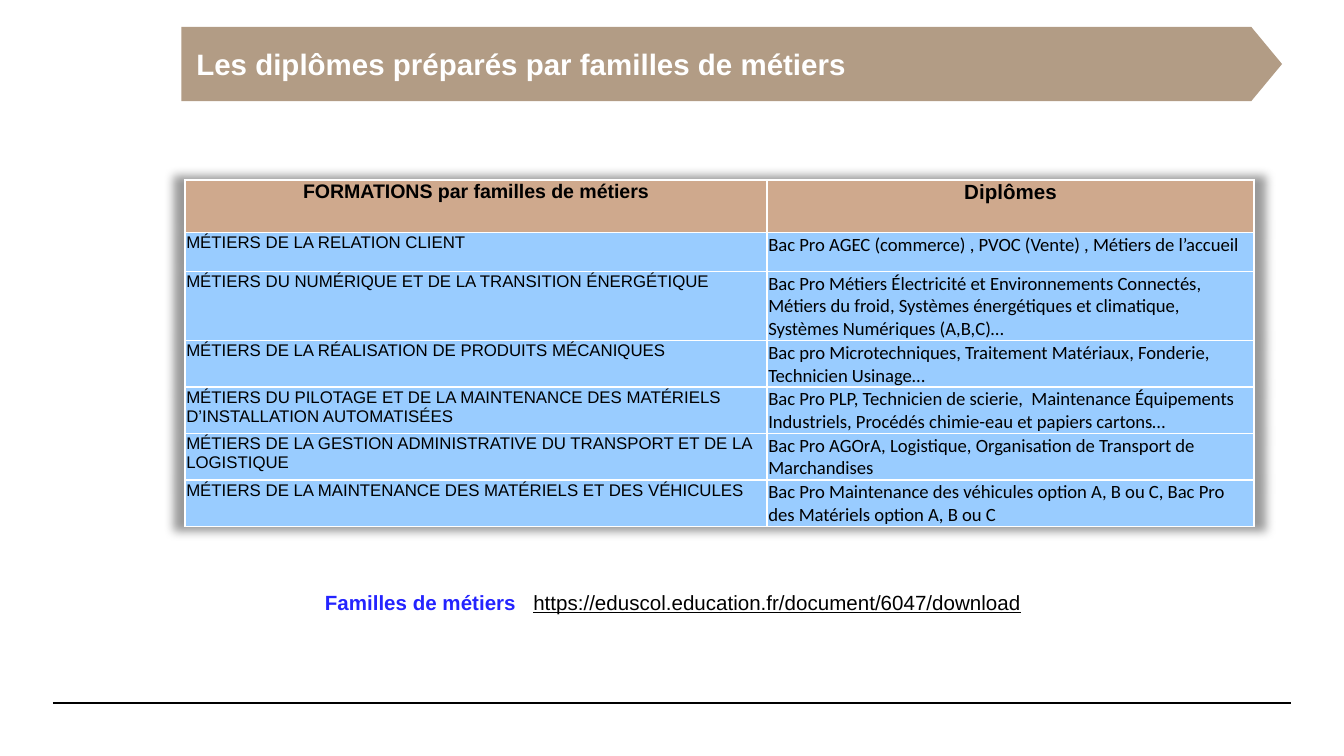
from lxml import etree
from pptx import Presentation
from pptx.dml.color import RGBColor
from pptx.enum.shapes import MSO_CONNECTOR as Connector, MSO_SHAPE as Shape
from pptx.enum.text import MSO_ANCHOR as Anchor, PP_ALIGN as Align
from pptx.oxml import parse_xml
from pptx.oxml.ns import nsdecls, qn
from pptx.util import Cm, Pt

BLACK = RGBColor(0x00, 0x00, 0x00)
WHITE = RGBColor(0xFF, 0xFF, 0xFF)
TAUPE = RGBColor(0xB2, 0x9C, 0x85)
TAN = RGBColor(0xCF, 0xA9, 0x8D)
SKY = RGBColor(0x99, 0xCC, 0xFF)
BLUE = RGBColor(0x24, 0x24, 0xFF)

HEADERS = ("FORMATIONS par familles de métiers", "Diplômes")
FAMILIES = [
    ("MÉTIERS DE LA RELATION CLIENT",
     "Bac Pro AGEC (commerce) , PVOC (Vente) , Métiers de l’accueil"),
    ("MÉTIERS DU NUMÉRIQUE ET DE LA TRANSITION ÉNERGÉTIQUE",
     "Bac Pro Métiers Électricité et Environnements Connectés, Métiers du froid, "
     "Systèmes énergétiques et climatique, Systèmes Numériques (A,B,C)…"),
    ("MÉTIERS DE LA RÉALISATION DE PRODUITS MÉCANIQUES",
     "Bac pro Microtechniques, Traitement Matériaux, Fonderie, Technicien Usinage…"),
    ("MÉTIERS DU PILOTAGE ET DE LA MAINTENANCE DES MATÉRIELS D’INSTALLATION AUTOMATISÉES",
     "Bac Pro PLP, Technicien de scierie,  Maintenance Équipements Industriels, "
     "Procédés chimie-eau et papiers cartons…"),
    ("MÉTIERS DE LA GESTION ADMINISTRATIVE DU TRANSPORT ET DE LA LOGISTIQUE",
     "Bac Pro AGOrA, Logistique, Organisation de Transport de Marchandises"),
    ("MÉTIERS DE LA MAINTENANCE DES MATÉRIELS ET DES VÉHICULES",
     "Bac Pro Maintenance des véhicules option A, B ou C, "
     "Bac Pro des Matériels option A, B ou C"),
]
HEADER_FONTS = (("Arial", 10.5), ("Arial", 11))
BODY_FONTS = (("Arial", 9), ("Calibri", 10))


def style_font(font, name, size, color, bold=False):
    font.name = name
    font.size = Pt(size)
    font.color.rgb = color
    font.bold = bold


def add_borders(cell):
    properties = cell._tc.get_or_add_tcPr()
    for position, side in enumerate(("lnL", "lnR", "lnT", "lnB")):
        properties.insert(position, parse_xml(
            f'<a:{side} {nsdecls("a")} w="12700"><a:solidFill>'
            f'<a:srgbClr val="{WHITE}"/></a:solidFill></a:{side}>'))


presentation = Presentation()
presentation.slide_width = Cm(25.4)
presentation.slide_height = Cm(14.28)
slide = presentation.slides.add_slide(presentation.slide_layouts[6])

footer_line = slide.shapes.add_connector(
    Connector.STRAIGHT, Cm(1), Cm(13.28), Cm(24.4), Cm(13.28))
footer_line.line.color.rgb = BLACK
footer_line.line.width = Pt(0.8)
etree.SubElement(footer_line._element.spPr, qn("a:effectLst"))

table = slide.shapes.add_table(
    len(FAMILIES) + 1, 2, Cm(3.5), Cm(3.4), Cm(20.2), Cm(5.43)).table
table.columns[0].width = Cm(11)
table.columns[1].width = Cm(9.2)
table._tbl.tblPr.insert(0, parse_xml(
    f'<a:effectLst {nsdecls("a")}><a:outerShdw blurRad="63500" sx="102000" '
    'sy="102000" algn="ctr" rotWithShape="0"><a:srgbClr val="000000">'
    '<a:alpha val="40000"/></a:srgbClr></a:outerShdw></a:effectLst>'))

for row_index, texts in enumerate([HEADERS, *FAMILIES]):
    is_header = row_index == 0
    table.rows[row_index].height = Cm(0.99 if is_header else 0.74)
    fonts = HEADER_FONTS if is_header else BODY_FONTS
    for column_index, (text, (name, size)) in enumerate(zip(texts, fonts)):
        cell = table.cell(row_index, column_index)
        cell.margin_left = cell.margin_right = cell.margin_top = Cm(0.02)
        cell.margin_bottom = 0
        cell.fill.solid()
        cell.fill.fore_color.rgb = TAN if is_header else SKY
        add_borders(cell)
        cell.text = text
        paragraph = cell.text_frame.paragraphs[0]
        paragraph.alignment = Align.CENTER if is_header else Align.LEFT
        style_font(paragraph.font, name, size, BLACK, is_header)

banner = slide.shapes.add_shape(
    Shape.PENTAGON, Cm(3.43), Cm(0.51), Cm(20.8), Cm(1.4))
banner.adjustments[0] = 0.415
banner.shadow.inherit = False
banner.fill.solid()
banner.fill.fore_color.rgb = TAUPE
banner.line.fill.background()
title_frame = banner.text_frame
title_frame.margin_left = title_frame.margin_right = Cm(0.28)
title_frame.vertical_anchor = Anchor.MIDDLE
title_frame.text = "Les diplômes préparés par familles de métiers"
paragraph = title_frame.paragraphs[0]
paragraph.alignment = Align.JUSTIFY
style_font(paragraph.font, "Arial", 15.8, WHITE, True)

source_box = slide.shapes.add_textbox(Cm(5.89), Cm(11.02), Cm(17.8), Cm(0.74))
source_box.text_frame.word_wrap = True
paragraph = source_box.text_frame.paragraphs[0]
tab_list = etree.SubElement(paragraph._p.get_or_add_pPr(), qn("a:tabLst"))
etree.SubElement(tab_list, qn("a:tab"), pos=str(Cm(3.94)), algn="l")
label = paragraph.add_run()
label.text = "Familles de métiers\t"
style_font(label.font, "Arial", 11, BLUE, True)
address = paragraph.add_run()
address.text = "https://eduscol.education.fr/document/6047/download"
style_font(address.font, "Arial", 11, BLACK)
address.font.underline = True

presentation.save("out.pptx")
